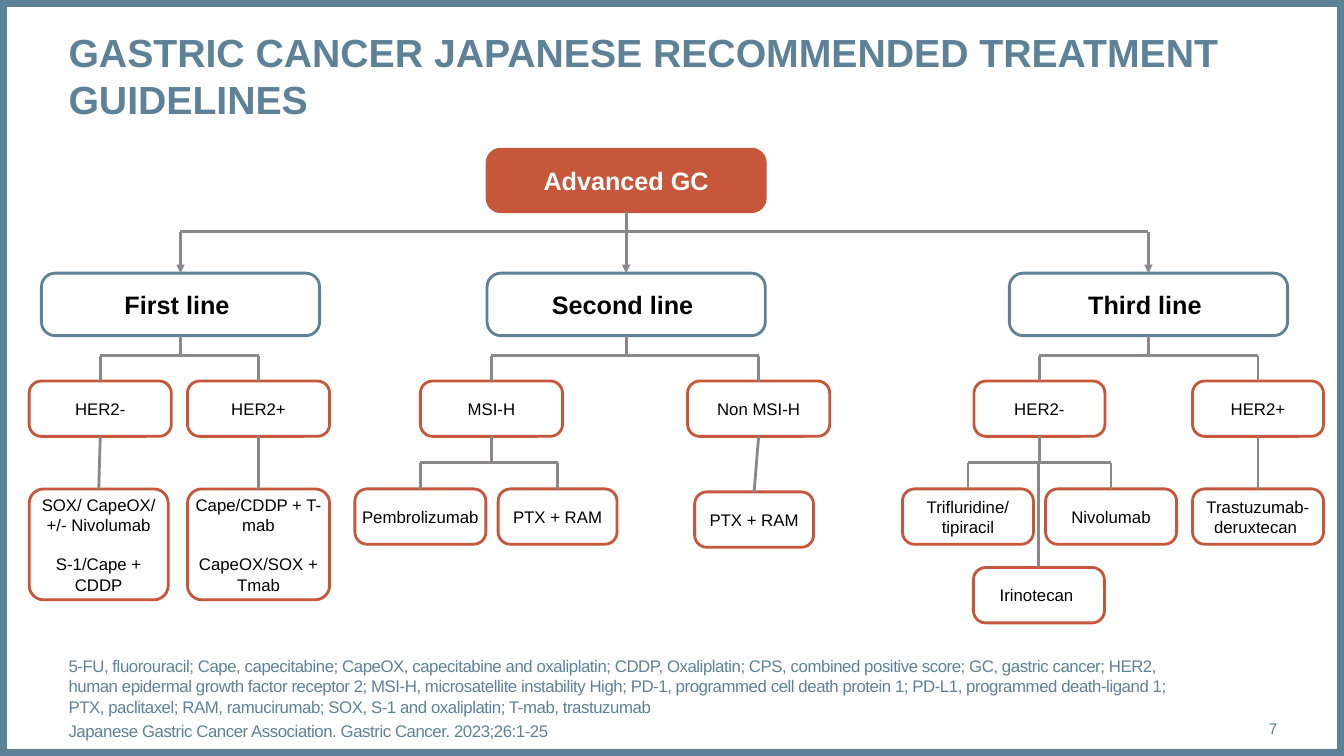
from lxml.etree import SubElement
from pptx import Presentation
from pptx.dml.color import RGBColor
from pptx.enum.shapes import MSO_CONNECTOR as Link, MSO_SHAPE as Shape
from pptx.enum.text import MSO_ANCHOR as Anchor, PP_ALIGN as Align
from pptx.oxml.ns import qn
from pptx.util import Inches, Pt

STEEL = RGBColor(0x5D, 0x82, 0x98)
RUST = RGBColor(0xC6, 0x57, 0x3B)
GREY = RGBColor(0x8B, 0x87, 0x8B)
WHITE = RGBColor(0xFF, 0xFF, 0xFF)
BLACK = RGBColor(0, 0, 0)
WIDTH, HEIGHT = Inches(13.33), Inches(7.5)
TOP, LEFT, BOTTOM = 0, 1, 2

ROOT_ROW, LINE_ROW, MARKER_ROW, DRUG_ROW, EXTRA_ROW = 19.73, 36.13, 50.4, 64.67, 75.07
LINE_BUS, MARKER_BUS, DRUG_BUS = 30.67, 47.07, 61.2
FIRST, SECOND, THIRD = 13.43, 46.59, 85.45
WIDE, MEDIUM, SMALL, NARROW = 20.7, 10.58, 9.75, 8.85
TALL, LOW, HEADING = 14.67, 7.33, 8.27
ABBREVIATIONS = (
    "5-FU, fluorouracil; Cape, capecitabine; CapeOX, capecitabine and oxaliplatin; "
    "CDDP, Oxaliplatin; CPS, combined positive score; GC, gastric cancer; HER2, human "
    "epidermal growth factor receptor 2; MSI-H, microsatellite instability High; PD-1, "
    "programmed cell death protein 1; PD-L1, programmed death-ligand 1; PTX, paclitaxel; "
    "RAM, ramucirumab; SOX, S-1 and oxaliplatin; T-mab, trastuzumab"
)
CITATION = "Japanese Gastric Cancer Association. Gastric Cancer. 2023;26:1-25"


def across(share):
    """Turn a percentage of the slide width into a length."""
    return round(WIDTH * share / 100)


def down(share):
    """Turn a percentage of the slide height into a length."""
    return round(HEIGHT * share / 100)


def write(frame, paragraphs, size, color, bold=False, align=Align.LEFT,
          anchor=Anchor.TOP, gap=0, tracking=0):
    """Fill a text frame with evenly formatted paragraphs."""
    frame.word_wrap = True
    frame.vertical_anchor = anchor
    frame.margin_left = frame.margin_right = frame.margin_top = frame.margin_bottom = 0
    for index, words in enumerate(paragraphs):
        paragraph = frame.add_paragraph() if index else frame.paragraphs[0]
        paragraph.alignment = align
        paragraph.space_before = Pt(gap if index else 0)
        run = paragraph.add_run()
        run.text = words
        run.font.name, run.font.size, run.font.bold = "Arial", Pt(size), bold
        run.font.color.rgb = color
        if tracking:
            run.font._element.set("spc", str(tracking))


def add_note(slide, left, top, width, height, paragraphs, size, **style):
    """Place steel-coloured text straight on the slide."""
    note = slide.shapes.add_textbox(across(left), down(top), across(width), down(height))
    write(note.text_frame, paragraphs, size, STEEL, **style)


def add_frame(slide):
    """Draw the border round the slide."""
    border = slide.shapes.add_shape(Shape.RECTANGLE, 0, 0, WIDTH, HEIGHT)
    border.shadow.inherit = False
    border.fill.background()
    border.line.color.rgb, border.line.width = STEEL, Pt(10)


def add_box(slide, center, top, width, height, paragraphs, size=12, fill=WHITE,
            outline=RUST, color=BLACK, bold=False, gap=0):
    """Draw a rounded box centred on a column."""
    box = slide.shapes.add_shape(Shape.ROUNDED_RECTANGLE, across(center - width / 2),
                                 down(top), across(width), down(height))
    box.adjustments[0] = 0.13 if height == TALL else 0.22
    box.shadow.inherit = False
    box.fill.solid()
    box.fill.fore_color.rgb = fill
    box.line.color.rgb, box.line.width = outline, Pt(2)
    write(box.text_frame, paragraphs, size, color, bold, Align.CENTER, Anchor.MIDDLE, gap)
    return box


def add_heading(slide, center, words):
    """Draw the box that names a line of treatment."""
    return add_box(slide, center, LINE_ROW, WIDE, HEADING, [words], 18,
                   outline=STEEL, bold=True)


def add_link(slide, start, end, above=None, below=None, arrow=False):
    """Draw a grey line, joined to the boxes above and below it."""
    link = slide.shapes.add_connector(Link.STRAIGHT, *start, *end)
    link.line.color.rgb, link.line.width = GREY, Pt(2)
    if above:
        link.begin_connect(above, BOTTOM)
    if below:
        link.end_connect(below, TOP)
    if arrow:
        SubElement(link.line._get_or_add_ln(), qn("a:tailEnd"), type="triangle")
    SubElement(link._element.spPr, qn("a:effectLst"))


def middle(box):
    """Give the horizontal centre of a box."""
    return box.left + box.width // 2


def add_drop(slide, parent, child):
    """Join a box directly to the one below it."""
    add_link(slide, (middle(parent), parent.top + parent.height),
             (middle(child), child.top), parent, child)


def add_branch(slide, parent, children, bus, arrow=False):
    """Join a box to several boxes through a horizontal bus."""
    level = down(bus)
    centers = [middle(child) for child in children]
    add_link(slide, (middle(parent), parent.top + parent.height),
             (middle(parent), level), above=parent)
    add_link(slide, (min(centers), level), (max(centers), level))
    for child, center in zip(children, centers):
        add_link(slide, (center, level), (center, child.top), below=child, arrow=arrow)


def add_first_line(slide):
    """Build the first-line tree."""
    heading = add_heading(slide, FIRST, "First line ")
    negative = add_box(slide, 7.46, MARKER_ROW, MEDIUM, LOW, ["HER2-"])
    positive = add_box(slide, 19.24, MARKER_ROW, MEDIUM, LOW, ["HER2+"])
    chemo = add_box(slide, 7.35, DRUG_ROW, 10.35, TALL,
                    ["SOX/ CapeOX/ +/- Nivolumab", "S-1/Cape + CDDP"], gap=14)
    targeted = add_box(slide, 19.24, DRUG_ROW, MEDIUM, TALL,
                       ["Cape/CDDP + T-mab", "CapeOX/SOX + Tmab"], gap=14)
    add_branch(slide, heading, [negative, positive], MARKER_BUS)
    add_drop(slide, negative, chemo)
    add_drop(slide, positive, targeted)
    return heading


def add_second_line(slide):
    """Build the second-line tree."""
    heading = add_heading(slide, SECOND, "Second line ")
    unstable = add_box(slide, 36.57, MARKER_ROW, MEDIUM, LOW, ["MSI-H"])
    stable = add_box(slide, 56.45, MARKER_ROW, MEDIUM, LOW, ["Non MSI-H"])
    pembrolizumab = add_box(slide, 31.28, DRUG_ROW, SMALL, LOW, ["Pembrolizumab"])
    paclitaxel = add_box(slide, 41.49, DRUG_ROW, NARROW, LOW, ["PTX + RAM"])
    stable_paclitaxel = add_box(slide, 56.11, 65.07, NARROW, LOW, ["PTX + RAM"])
    add_branch(slide, heading, [unstable, stable], MARKER_BUS)
    add_branch(slide, unstable, [pembrolizumab, paclitaxel], DRUG_BUS)
    add_drop(slide, stable, stable_paclitaxel)
    return heading


def add_third_line(slide):
    """Build the third-line tree."""
    heading = add_heading(slide, THIRD, "Third line ")
    negative = add_box(slide, 77.34, MARKER_ROW, SMALL, LOW, ["HER2-"])
    positive = add_box(slide, 93.6, MARKER_ROW, SMALL, LOW, ["HER2+"])
    trifluridine = add_box(slide, 72.02, DRUG_ROW, SMALL, LOW, ["Trifluridine/", "tipiracil"])
    nivolumab = add_box(slide, 82.67, DRUG_ROW, SMALL, LOW, ["Nivolumab"])
    irinotecan = add_box(slide, 77.3, EXTRA_ROW, SMALL, LOW, ["Irinotecan "])
    trastuzumab = add_box(slide, 93.6, DRUG_ROW, SMALL, LOW, ["Trastuzumab-deruxtecan "])
    add_branch(slide, heading, [negative, positive], MARKER_BUS)
    add_branch(slide, negative, [trifluridine, irinotecan, nivolumab], DRUG_BUS)
    add_drop(slide, positive, trastuzumab)
    return heading


def main():
    """Build and save the treatment guideline slide."""
    deck = Presentation()
    deck.slide_width, deck.slide_height = WIDTH, HEIGHT
    slide = deck.slides.add_slide(deck.slide_layouts[6])
    add_frame(slide)
    add_note(slide, 5.1, 3.73, 89.95, 12.53,
             ["GASTRIC CANCER JAPANESE RECOMMENDED TREATMENT GUIDELINES"], 28, bold=True)
    root = add_box(slide, SECOND, ROOT_ROW, WIDE, HEADING, ["Advanced GC"], 18,
                   fill=RUST, color=WHITE, bold=True)
    headings = [add_first_line(slide), add_second_line(slide), add_third_line(slide)]
    add_branch(slide, root, headings, LINE_BUS, arrow=True)
    add_note(slide, 5.1, 86.67, 83.5, 11.33, [ABBREVIATIONS, CITATION], 12,
             anchor=Anchor.BOTTOM, gap=3, tracking=-30)
    add_note(slide, 88.6, 93.73, 6.45, 5.33, ["7"], 11,
             align=Align.RIGHT, anchor=Anchor.MIDDLE)
    deck.save("out.pptx")


if __name__ == "__main__":
    main()
